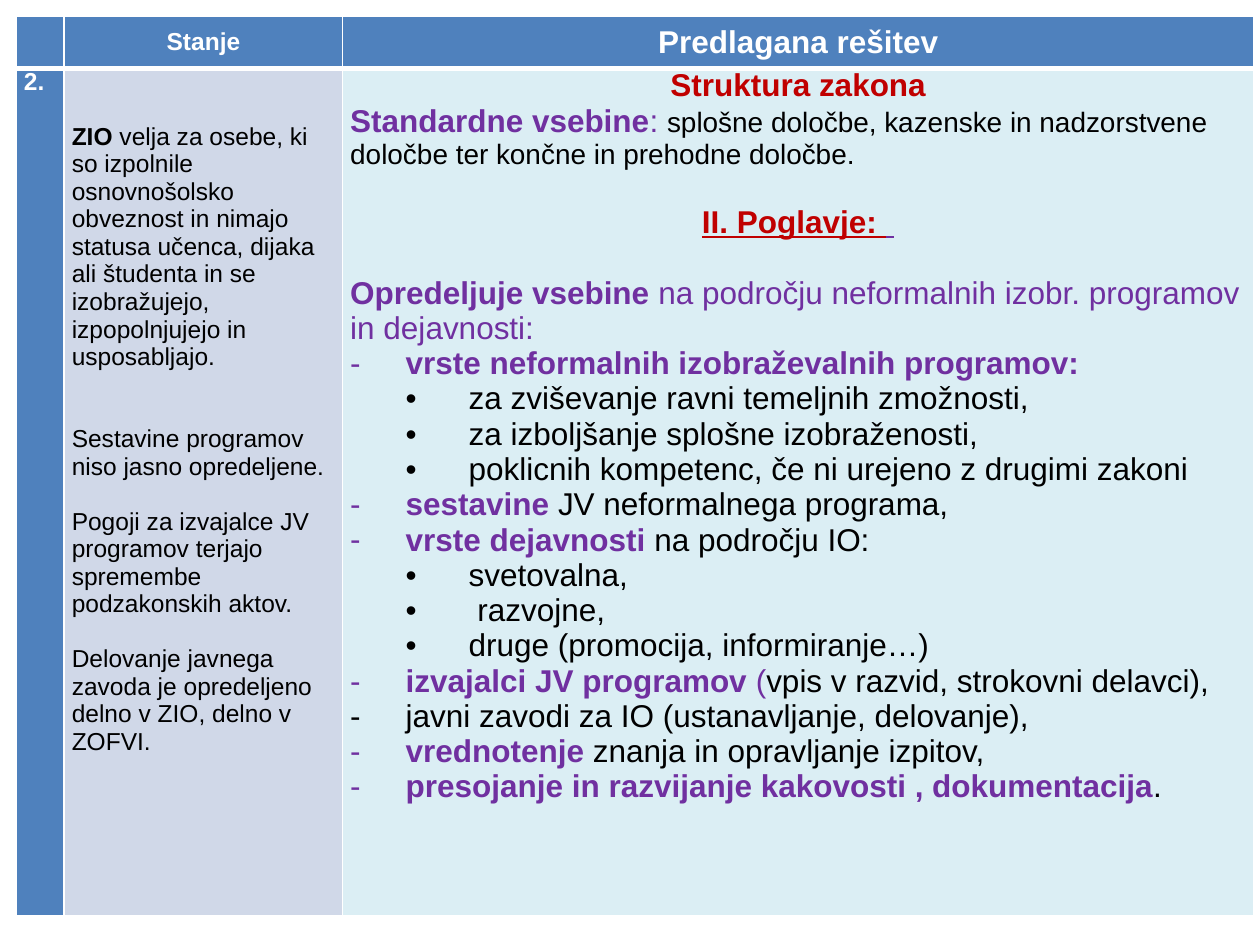
import dataclasses
import typing
import lxml.etree
import pptx
import pptx.dml.color
import pptx.enum.text
import pptx.oxml.ns
import pptx.util

RGB = pptx.dml.color.RGBColor
WHITE = RGB(0xFF, 0xFF, 0xFF)
BLACK = RGB(0, 0, 0)
BLUE = RGB(0x4F, 0x81, 0xBD)
GREY = RGB(0xD0, 0xD8, 0xE8)
AQUA = RGB(0xDB, 0xEE, 0xF4)
RED = RGB(0xC0, 0, 0)
PLUM = RGB(0x70, 0x30, 0xA0)

WIDE, HIGH = pptx.util.Inches(10), pptx.util.Inches(7.5)
EDGE = 0.013
COLS = (0.038, 0.221, 0.723)
ROWS = (0.055, 0.897)
LEAD = 1.117
HANG = 0.05
MID = pptx.enum.text.PP_ALIGN.CENTER


class Run(typing.NamedTuple):
    text: str
    tint: RGB = BLACK
    bold: bool = False
    size: int = 18
    line: bool = False


@dataclasses.dataclass
class Para:
    runs: list[Run]
    mark: str = ""
    level: int = 0
    gap: float = 0
    align: typing.Any = None


@dataclasses.dataclass
class Cell:
    fill: RGB
    paras: list[Para]
    head: bool = False
    blank: float = 0


def skip(size: int, count: int = 1) -> float:
    return count * size * LEAD


def note(text: str, count: int = 1) -> Para:
    return Para([Run(text, size=14)], gap=skip(14, count))


def title(text: str, size: int) -> Cell:
    return Cell(BLUE, [Para([Run(text, WHITE, True, size)], align=MID)], True)


def dash(key: str, rest: str = "") -> Para:
    runs = [Run(key, PLUM, True), Run(rest)]
    return Para([run for run in runs if run.text], "-")


def dot(text: str) -> Para:
    return Para([Run(text)], "•", 1)


def tag(root: typing.Any, name: str, **attrs: str) -> typing.Any:
    return lxml.etree.SubElement(root, pptx.oxml.ns.qn("a:" + name), attrs)


def write(para: typing.Any, data: Para) -> None:
    form = {"alignment": data.align, "level": data.level,
            "space_before": pptx.util.Pt(data.gap)}
    for name, value in form.items():
        setattr(para, name, value)
    if data.mark:
        props = para._p.get_or_add_pPr()
        props.set("marL", str(int(WIDE * (0.044 + HANG * data.level))))
        props.set("indent", str(int(-WIDE * HANG)))
        tag(props, "buFont", typeface="Arial")
        tag(props, "buChar", char=data.mark)
    for item in data.runs:
        run = para.add_run()
        run.text = item.text
        form = {"name": "Arial", "size": pptx.util.Pt(item.size),
                "bold": item.bold, "underline": item.line}
        for name, value in form.items():
            setattr(run.font, name, value)
        run.font.color.rgb = item.tint


def draw(cell: typing.Any, data: Cell) -> None:
    props = cell._tc.get_or_add_tcPr()
    thick = "lnB" if data.head else "lnT"
    for side in ("lnL", "lnR", "lnT", "lnB"):
        width = pptx.util.Pt(3 if side == thick else 1)
        line = tag(props, side, w=str(width))
        tag(tag(line, "solidFill"), "srgbClr", val=str(WHITE))
    cell.fill.solid()
    cell.fill.fore_color.rgb = data.fill
    anchor = pptx.enum.text.MSO_ANCHOR
    form = {"margin_left": int(WIDE * 0.006), "margin_right": int(WIDE * 0.006),
            "margin_top": pptx.util.Pt(data.blank), "margin_bottom": 0,
            "vertical_anchor": anchor.MIDDLE if data.head else anchor.TOP}
    for name, value in form.items():
        setattr(cell, name, value)
    frame = cell.text_frame
    for spot, para in enumerate(data.paras):
        write(frame.add_paragraph() if spot else frame.paragraphs[0], para)


STATE = [
    Para([Run("ZIO", bold=True, size=14),
          Run(" velja za osebe, ki so izpolnile osnovnošolsko obveznost in nimajo "
              "statusa učenca, dijaka ali študenta in se izobražujejo, "
              "izpopolnjujejo in usposabljajo.", size=14)]),
    note("Sestavine programov niso jasno opredeljene.", 2),
    note("Pogoji za izvajalce JV programov terjajo spremembe podzakonskih aktov."),
    note("Delovanje javnega zavoda je opredeljeno delno v ZIO, delno v ZOFVI."),
]

PLAN = [
    Para([Run("Struktura zakona", RED, True)], align=MID),
    Para([Run("Standardne vsebine", PLUM, True), Run(": ", PLUM),
          Run("splošne določbe, kazenske in nadzorstvene določbe ter končne in "
              "prehodne določbe.", size=16)]),
    Para([Run("II. Poglavje: ", RED, True, line=True),
          Run(" ", PLUM, True, line=True)], gap=skip(18), align=MID),
    Para([Run("Opredeljuje vsebine ", PLUM, True),
          Run("na področju neformalnih izobr. programov in dejavnosti:", PLUM)],
         gap=skip(18)),
    dash("vrste neformalnih izobraževalnih programov:"),
    dot("za zviševanje ravni temeljnih zmožnosti,"),
    dot("za izboljšanje splošne izobraženosti,"),
    dot("poklicnih kompetenc, če ni urejeno z drugimi zakoni"),
    dash("sestavine", " JV neformalnega programa,"),
    dash("vrste dejavnosti ", "na področju IO:"),
    dot("svetovalna,"),
    dot(" razvojne,"),
    dot("druge (promocija, informiranje…)"),
    Para([Run("izvajalci JV programov ", PLUM, True), Run("(", PLUM),
          Run("vpis v razvid, strokovni delavci),")], "-"),
    dash("", "javni zavodi za IO (ustanavljanje, delovanje),"),
    dash("vrednotenje", " znanja in opravljanje izpitov,"),
    dash("presojanje in razvijanje kakovosti , dokumentacija", "."),
]

GRID = [
    [Cell(BLUE, [], True), title("Stanje", 14), title("Predlagana rešitev", 18)],
    [Cell(BLUE, [Para([Run("2.", WHITE, True, 14)])]),
     Cell(GREY, STATE, blank=skip(14, 2)), Cell(AQUA, PLAN)],
]


def main() -> None:
    deck = pptx.Presentation()
    deck.slide_width, deck.slide_height = WIDE, HIGH
    slide = deck.slides.add_slide(deck.slide_layouts[6])
    table = slide.shapes.add_table(
        len(ROWS), len(COLS), int(WIDE * EDGE), int(WIDE * EDGE),
        int(WIDE * sum(COLS)), int(HIGH * sum(ROWS))).table
    for col, share in zip(table.columns, COLS):
        col.width = int(WIDE * share)
    for row, share in zip(table.rows, ROWS):
        row.height = int(HIGH * share)
    for row, line in zip(table.rows, GRID):
        for cell, data in zip(row.cells, line):
            draw(cell, data)
    deck.save("out.pptx")


if __name__ == "__main__":
    main()
